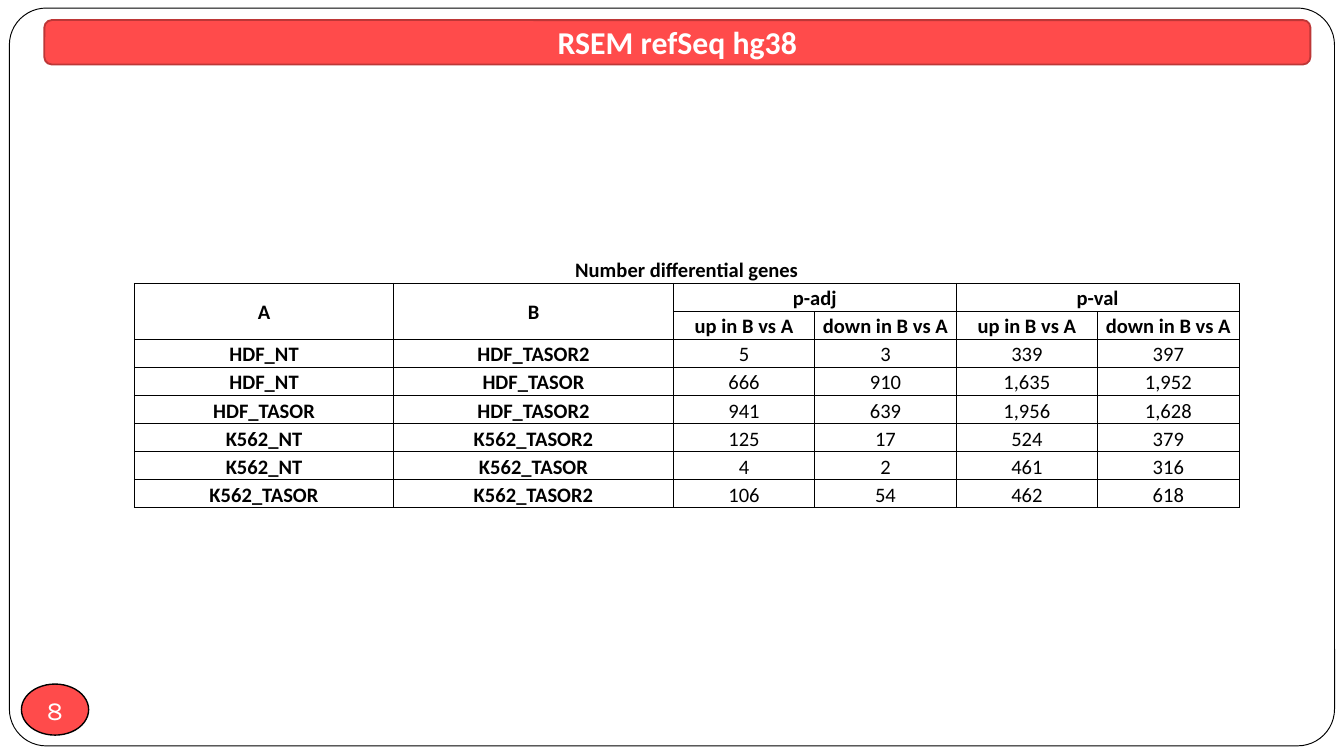
from lxml import etree
from pptx import Presentation
from pptx.dml.color import RGBColor
from pptx.enum import shapes, text
from pptx.oxml import ns
from pptx.util import Inches, Pt

BLACK = RGBColor(0x00, 0x00, 0x00)
WHITE = RGBColor(0xFF, 0xFF, 0xFF)
RED = RGBColor(0xFF, 0x4B, 0x4B)
DARK_RED = RGBColor(0xBD, 0x37, 0x37)
SHAPE = shapes.MSO_SHAPE
MIDDLE, BOTTOM = text.MSO_ANCHOR.MIDDLE, text.MSO_ANCHOR.BOTTOM


def add_box(kind, left, top, width, height, fill, line, weight):
    sp = s.shapes.add_shape(kind, Inches(left), Inches(top), Inches(width), Inches(height))
    sp.shadow.inherit = False
    sp.fill.solid()
    sp.fill.fore_color.rgb = fill
    sp.line.color.rgb = line
    sp.line.width = Pt(weight)
    return sp


def write(tf, words, font, size, color, bold):
    p = tf.paragraphs[0]
    p.text = words
    p.alignment = text.PP_ALIGN.CENTER
    for r in p.runs:
        r.font.name = font
        r.font.size = Pt(size)
        r.font.bold = bold
        r.font.color.rgb = color


prs = Presentation()
prs.slide_width = Inches(10)
prs.slide_height = Inches(10 * 9 / 16)
s = prs.slides.add_slide(prs.slide_layouts[6])

frame = add_box(SHAPE.ROUNDED_RECTANGLE, 0.07, 0.06, 9.86, 5.49, WHITE, BLACK, 0.5)
frame.adjustments[0] = 0.05

badge = add_box(SHAPE.OVAL, 0.16, 5.09, 0.5, 0.38, RED, BLACK, 0.75)
tf = badge.text_frame
tf.margin_left = tf.margin_right = tf.margin_top = tf.margin_bottom = 0
tf.word_wrap = False
tf.vertical_anchor = MIDDLE
write(tf, "8", "Karla", 14, WHITE, False)

title = add_box(SHAPE.ROUNDED_RECTANGLE, 0.33, 0.15, 9.42, 0.33, RED, DARK_RED, 1)
title.text_frame.vertical_anchor = MIDDLE
write(title.text_frame, "RSEM refSeq hg38", "Calibri", 17, WHITE, True)

rows = [
    ["Number differential genes", "", "", "", "", ""],
    ["A", "B", "p-adj", "", "p-val", ""],
    ["", ""] + ["up in B vs A", "down in B vs A"] * 2,
    ["HDF_NT", "HDF_TASOR2", "5", "3", "339", "397"],
    ["HDF_NT", "HDF_TASOR", "666", "910", "1,635", "1,952"],
    ["HDF_TASOR", "HDF_TASOR2", "941", "639", "1,956", "1,628"],
    ["K562_NT", "K562_TASOR2", "125", "17", "524", "379"],
    ["K562_NT", "K562_TASOR", "4", "2", "461", "316"],
    ["K562_TASOR", "K562_TASOR2", "106", "54", "462", "618"],
]
table_width, table_height = 8.22, 1.88
label_widths = [1.93, 2.08]
col_widths = label_widths + [(table_width - sum(label_widths)) / 4] * 4
header_rows, label_cols = 3, len(label_widths)

table = s.shapes.add_table(len(rows), len(col_widths), Inches(1), Inches(1.9),
                           Inches(table_width), Inches(table_height)).table
table.first_row = table.horz_banding = False
for column, width in zip(table.columns, col_widths):
    column.width = Inches(width)
for row in table.rows:
    row.height = Inches(table_height / len(rows))

for i, values in enumerate(rows):
    for j, value in enumerate(values):
        cell = table.cell(i, j)
        cell.margin_left = cell.margin_right = cell.margin_top = Inches(0.01)
        cell.margin_bottom = 0
        cell.vertical_anchor = MIDDLE if i == 1 and j < label_cols else BOTTOM
        write(cell.text_frame, value, "Calibri", 11, BLACK, i < header_rows or j < label_cols)
        tc_pr = cell._tc.get_or_add_tcPr()
        for side in ("lnL", "lnR", "lnT", "lnB"):
            ln = etree.SubElement(tc_pr, ns.qn("a:" + side), w=str(Pt(0.5)))
            if i == 0 and side != "lnB":  # the caption row is open on three sides
                etree.SubElement(ln, ns.qn("a:noFill"))
            else:
                solid = etree.SubElement(ln, ns.qn("a:solidFill"))
                etree.SubElement(solid, ns.qn("a:srgbClr"), val=str(BLACK))
        cell.fill.background()

for top, left, bottom, right in [(0, 0, 0, 5), (1, 0, 2, 0), (1, 1, 2, 1),
                                 (1, 2, 1, 3), (1, 4, 1, 5)]:
    table.cell(top, left).merge(table.cell(bottom, right))

prs.save("out.pptx")
